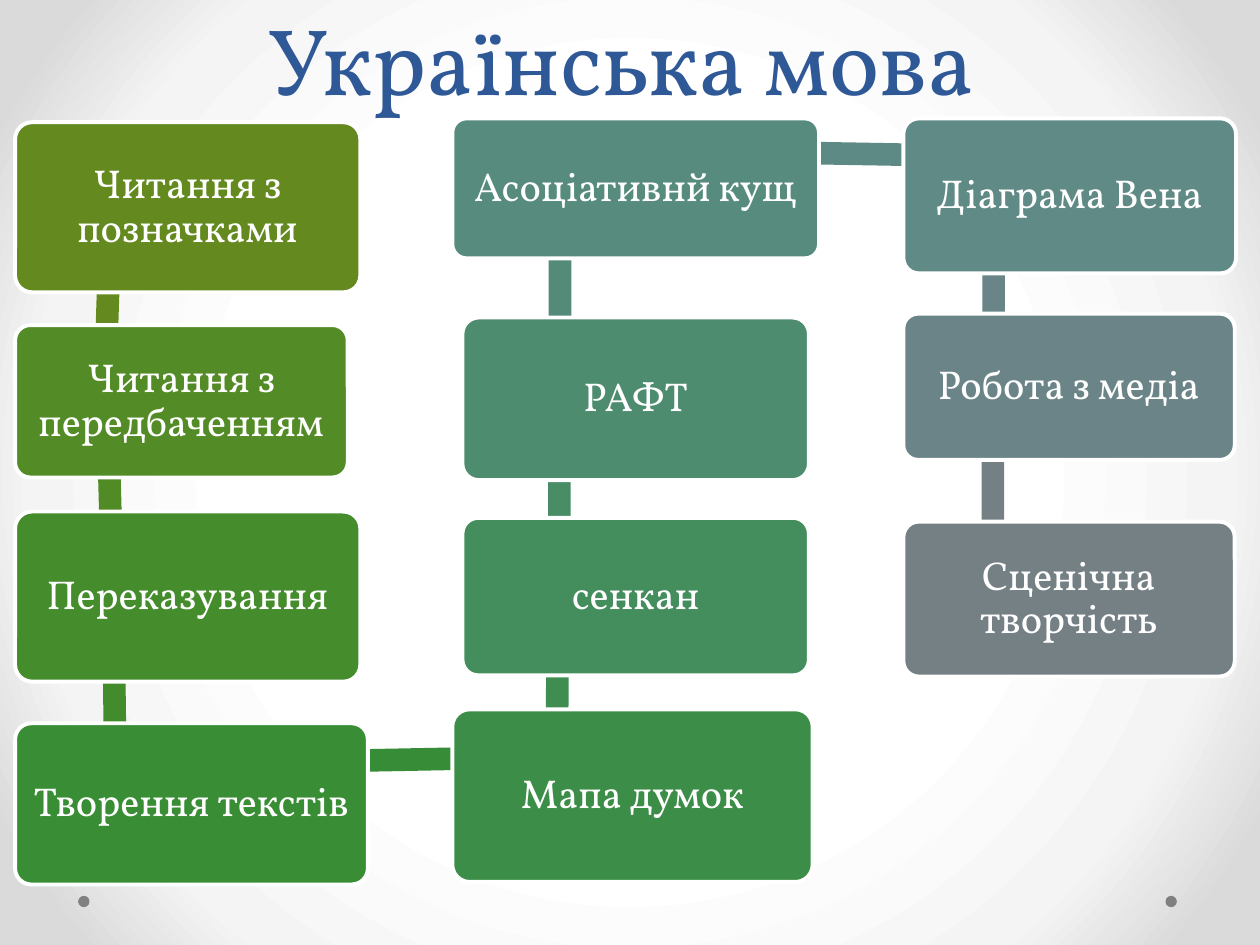
from pptx import Presentation
from pptx.dml.color import RGBColor
from pptx.enum.shapes import MSO_SHAPE
from pptx.enum.text import MSO_ANCHOR, PP_ALIGN
from pptx.oxml import parse_xml
from pptx.oxml.ns import nsdecls
from pptx.util import Inches, Pt

FONT = "Vollkorn"
LINK_THICKNESS = 0.18

# Text, fill, (left, top, width, height)
STEPS = [
    ("Читання з позначками", "63891F", (0.12, 0.97, 2.74, 1.35)),
    ("Читання з передбаченням", "538B26", (0.12, 2.58, 2.64, 1.21)),
    ("Переказування", "448C2C", (0.12, 4.06, 2.74, 1.35)),
    ("Творення текстів", "398D34", (0.12, 5.74, 2.8, 1.28)),
    ("Мапа думок", "3C8D47", (3.59, 5.63, 2.86, 1.37)),
    ("сенкан", "448D5D", (3.67, 4.11, 2.75, 1.25)),
    ("РАФТ", "4D8C6F", (3.67, 2.52, 2.75, 1.29)),
    ("Асоціативнй кущ", "568B7D", (3.59, 0.94, 2.91, 1.11)),
    ("Діаграма Вена", "608A86", (7.17, 0.94, 2.64, 1.23)),
    ("Робота з медіа", "6A8487", (7.17, 2.49, 2.63, 1.16)),
    ("Сценічна творчість", "758085", (7.17, 4.14, 2.63, 1.23)),
]

# Band leaving each step but the last: fill, left, top, length, rotation
LINKS = [
    ("63891F", 0.1, 2.02, 1.53, 91.9),
    ("518B26", 0.09, 3.56, 1.55, 88.5),
    ("428C2E", 0.08, 5.16, 1.65, 89.3),
    ("378D37", 0.92, 5.95, 3.49, 358.9),
    ("3F8D51", 3.64, 5.13, 1.57, 270.4),
    ("498D67", 3.66, 3.55, 1.56, 270),
    ("538B78", 3.61, 1.93, 1.67, 270),
    ("5E8A85", 4.45, 1.12, 3.43, 1),
    ("698588", 7.13, 1.91, 1.51, 89.9),
    ("758085", 7.04, 3.51, 1.68, 90),
]


def color(value):
    return RGBColor.from_string(value)


def set_background(page):
    """Fill the page with a radial gradient, white in the middle."""
    stops = "".join(
        f'<a:gs pos="{percent * 1000}"><a:srgbClr val="{value}"/></a:gs>'
        for percent, value in [(50, "FFFFFF"), (76, "F4F4F4"), (92, "DADADA")]
    )
    background = parse_xml(
        f'<p:bg {nsdecls("p", "a")}><p:bgPr><a:gradFill rotWithShape="1">'
        f'<a:gsLst>{stops}</a:gsLst><a:path path="circle">'
        '<a:fillToRect l="50000" t="50000" r="50000" b="50000"/></a:path>'
        "</a:gradFill><a:effectLst/></p:bgPr></p:bg>"
    )
    page._element.cSld.insert(0, background)


def add_filled(page, kind, bounds, fill):
    shape = page.shapes.add_shape(kind, *(Inches(value) for value in bounds))
    shape.shadow.inherit = False
    shape.fill.solid()
    shape.fill.fore_color.rgb = color(fill)
    shape.line.fill.background()
    return shape


def add_span(para, text, size, value):
    span = para.add_run()
    span.text = text
    span.font.name = FONT
    span.font.size = Pt(size)
    span.font.color.rgb = color(value)


def add_title(page, text):
    title = page.shapes.title
    title.left, title.top = Inches(0.43), Inches(0.13)
    title.width, title.height = Inches(9), Inches(0.83)
    title.text_frame.vertical_anchor = MSO_ANCHOR.BOTTOM
    para = title.text_frame.paragraphs[0]
    para.alignment = PP_ALIGN.CENTER
    para.line_spacing = Pt(58)
    add_span(para, text, 54, "2F5897")


def add_link(page, fill, left, top, length, rotation):
    bounds = (left, top, length, LINK_THICKNESS)
    add_filled(page, MSO_SHAPE.RECTANGLE, bounds, fill).rotation = rotation


def add_step(page, text, fill, bounds):
    box = add_filled(page, MSO_SHAPE.ROUNDED_RECTANGLE, bounds, fill)
    box.adjustments[0] = 0.1
    box.line.color.rgb = color("FFFFFF")
    box.line.width = Pt(2.25)
    frame = box.text_frame
    frame.word_wrap = True
    frame.vertical_anchor = MSO_ANCHOR.MIDDLE
    frame.margin_left = frame.margin_right = Inches(0.1)
    frame.margin_top = frame.margin_bottom = Inches(0.1)
    para = frame.paragraphs[0]
    para.alignment = PP_ALIGN.CENTER
    para.line_spacing = 0.9
    add_span(para, text, 23, "FFFFFF")


def main():
    deck = Presentation()
    deck.slide_width, deck.slide_height = Inches(10), Inches(7.5)
    page = deck.slides.add_slide(deck.slide_layouts[5])
    set_background(page)
    for left in (9.25, 0.62):
        add_filled(page, MSO_SHAPE.OVAL, (left, 7.11, 0.09, 0.09), "808080")
    add_title(page, "Українська мова")
    # Each band lies under the two boxes that it joins
    for index, step in enumerate(STEPS):
        if index < len(LINKS):
            add_link(page, *LINKS[index])
        add_step(page, *step)
    deck.save("out.pptx")


if __name__ == "__main__":
    main()
